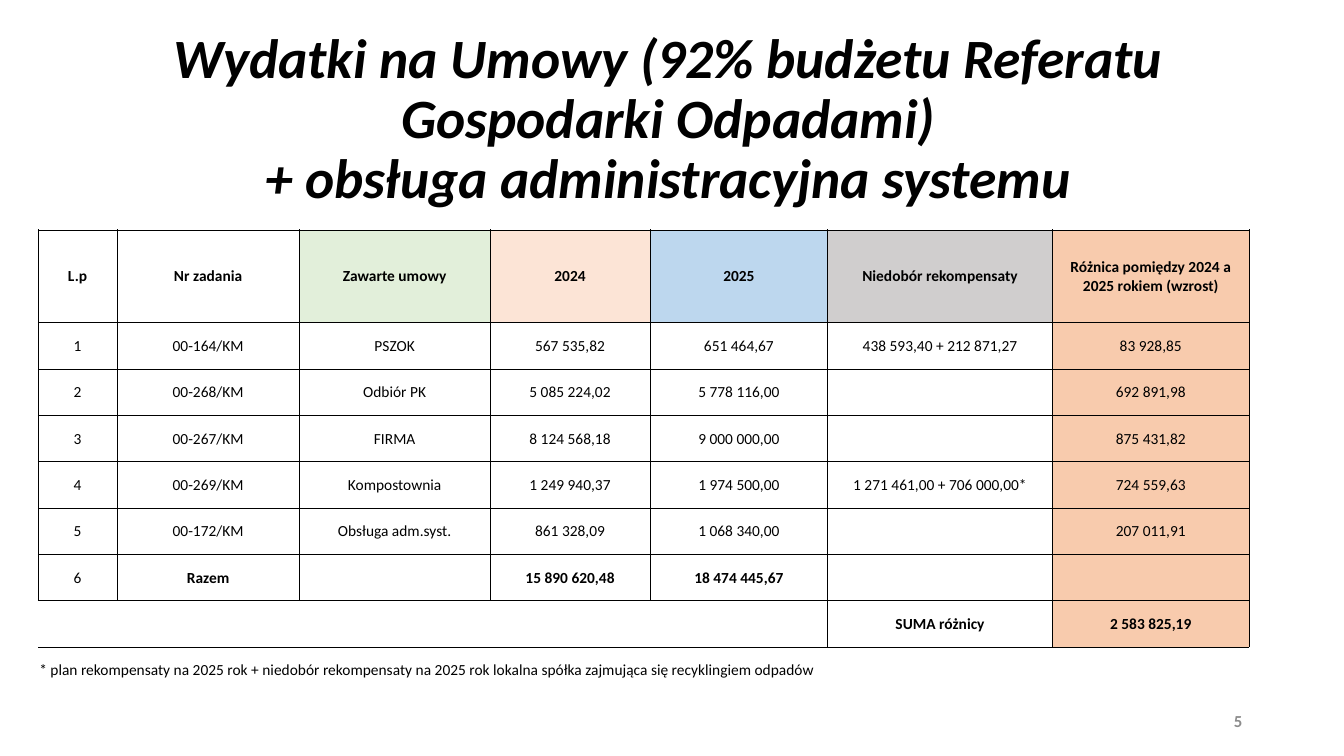
from copy import deepcopy

from lxml.etree import SubElement
from pptx import Presentation
from pptx.dml.color import RGBColor
from pptx.enum.text import MSO_ANCHOR as Anchor, PP_ALIGN as Align
from pptx.oxml.ns import qn
from pptx.util import Inches, Pt

FONT = "Calibri"
COLORS = {
    "text": "000000", "number": "8C8C8C", "border": "000000",
    "contracts": "E2EFDA", "year_2024": "FCE4D6", "year_2025": "BDD7EE",
    "shortfall": "D0CECE", "difference": "F8CBAD",
}
HEADER_FILLS = [None, None, "contracts", "year_2024", "year_2025", "shortfall", "difference"]
COLUMN_WIDTHS = [0.78, 1.81, 1.89, 1.59, 1.76, 2.23, 1.95]
HEADER_HEIGHT, ROW_HEIGHT = 0.92, 0.46
TITLE = "Wydatki na Umowy (92% budżetu Referatu Gospodarki Odpadami)\v+ obsługa administracyjna systemu"
FOOTNOTE = ("* plan rekompensaty na 2025 rok + niedobór rekompensaty na 2025 rok "
            "lokalna spółka zajmująca się recyklingiem odpadów")
ROWS = [
    ["L.p", "Nr zadania", "Zawarte umowy", "2024", "2025", "Niedobór rekompensaty",
     "Różnica pomiędzy 2024 a 2025 rokiem (wzrost)"],
    ["1", "00-164/KM", "PSZOK", "567 535,82", "651 464,67", "438 593,40 + 212 871,27", "83 928,85"],
    ["2", "00-268/KM", "Odbiór PK", "5 085 224,02", "5 778 116,00", "", "692 891,98"],
    ["3", "00-267/KM", "FIRMA", "8 124 568,18", "9 000 000,00", "", "875 431,82"],
    ["4", "00-269/KM", "Kompostownia", "1 249 940,37", "1 974 500,00",
     "1 271 461,00 + 706 000,00*", "724 559,63"],
    ["5", "00-172/KM", "Obsługa adm.syst.", "861 328,09", "1 068 340,00", "", "207 011,91"],
    ["6", "Razem", "", "15 890 620,48", "18 474 445,67", "", ""],
    ["", "", "", "", "", "SUMA różnicy", "2 583 825,19"],
    [FOOTNOTE, "", "", "", "", "", ""],
]
TOTAL_ROW, SUM_ROW, NOTE_ROW = 6, 7, 8
SHORTFALL_COLUMN, DIFFERENCE_COLUMN = 5, 6
NO_STYLE = "{2D5ABB26-0587-4C30-8999-92F81FD0307C}"


def format_text(text_frame, size, align, color="text", bold=False, italic=False):
    for paragraph in text_frame.paragraphs:
        paragraph.alignment = align
        for font in [run.font for run in paragraph.runs] or [paragraph.font]:
            font.name, font.size = FONT, Pt(size)
            font.bold, font.italic = bold, italic
            font.color.rgb = RGBColor.from_string(COLORS[color])


def place(shape, left, top, width, height):
    shape.left, shape.top = Inches(left), Inches(top)
    shape.width, shape.height = Inches(width), Inches(height)


def add_title(slide, box):
    title = slide.shapes.title
    place(title, *box)
    frame = title.text_frame
    frame.text = TITLE
    frame.word_wrap = True
    frame.vertical_anchor = Anchor.MIDDLE
    frame.margin_bottom = Inches(0.65)
    format_text(frame, 39.6, Align.CENTER, bold=True, italic=True)
    paragraph = frame.paragraphs[0]
    paragraph.line_spacing = 0.9
    # The line break takes the size of the text around it
    properties = paragraph.runs[0].font._element
    for line_break in paragraph._p.findall(qn("a:br")):
        line_break.append(deepcopy(properties))


def border_sides(row, column):
    if row < SUM_ROW:
        return "LRTB"
    if row == NOTE_ROW:
        return "T" if column == DIFFERENCE_COLUMN else ""
    if column == DIFFERENCE_COLUMN:
        return "LRTB"
    return {SHORTFALL_COLUMN: "LRT", SHORTFALL_COLUMN - 1: "RT"}.get(column, "T")


def set_borders(cell, sides):
    properties = cell._tc.get_or_add_tcPr()
    for side in sides:
        line = SubElement(properties, qn(f"a:ln{side}"), w=str(Pt(0.5)))
        fill = SubElement(line, qn("a:solidFill"))
        SubElement(fill, qn("a:srgbClr"), val=COLORS["border"])


def fill_name(row, column):
    if row == 0:
        return HEADER_FILLS[column]
    return "difference" if column == DIFFERENCE_COLUMN and row < NOTE_ROW else None


def format_cell(cell, row, column):
    cell.text = ROWS[row][column]
    cell.vertical_anchor = Anchor.MIDDLE
    cell.margin_left = cell.margin_right = cell.margin_top = Inches(0.01)
    cell.margin_bottom = 0
    bold = row in (0, SUM_ROW) or (row == TOTAL_ROW and column > 0)
    align = Align.LEFT if row == NOTE_ROW else Align.CENTER
    format_text(cell.text_frame, 11, align, bold=bold)
    set_borders(cell, border_sides(row, column))
    name = fill_name(row, column)
    if name:
        cell.fill.solid()
        cell.fill.fore_color.rgb = RGBColor.from_string(COLORS[name])
    else:
        cell.fill.background()


def add_expense_table(slide, box):
    frame = slide.shapes.add_table(len(ROWS), len(COLUMN_WIDTHS), *map(Inches, box))
    table = frame.table
    table.first_row = table.horz_banding = False
    table._tbl.tblPr.find(qn("a:tableStyleId")).text = NO_STYLE
    for column, width in zip(table.columns, COLUMN_WIDTHS):
        column.width = Inches(width)
    for index, row in enumerate(table.rows):
        row.height = Inches(ROW_HEIGHT if index else HEADER_HEIGHT)
        for column, cell in enumerate(row.cells):
            format_cell(cell, index, column)
    # The footnote runs under all columns but the last
    table.cell(NOTE_ROW, 0).merge(table.cell(NOTE_ROW, SHORTFALL_COLUMN))


def add_slide_number(slide, box):
    frame = slide.shapes.add_textbox(*map(Inches, box)).text_frame
    frame.word_wrap = True
    frame.text = "5"
    frame.vertical_anchor = Anchor.MIDDLE
    format_text(frame, 12, Align.RIGHT, "number", bold=True)


def main():
    presentation = Presentation()
    presentation.slide_width, presentation.slide_height = Inches(13.33), Inches(7.5)
    slide = presentation.slides.add_slide(presentation.slide_layouts[5])
    add_title(slide, (0.88, 0.77, 11.5, 1.45))
    add_expense_table(slide, (0.38, 2.28, 12, 4.6))
    add_slide_number(slide, (9.42, 6.95, 3, 0.4))
    presentation.save("out.pptx")


if __name__ == "__main__":
    main()
